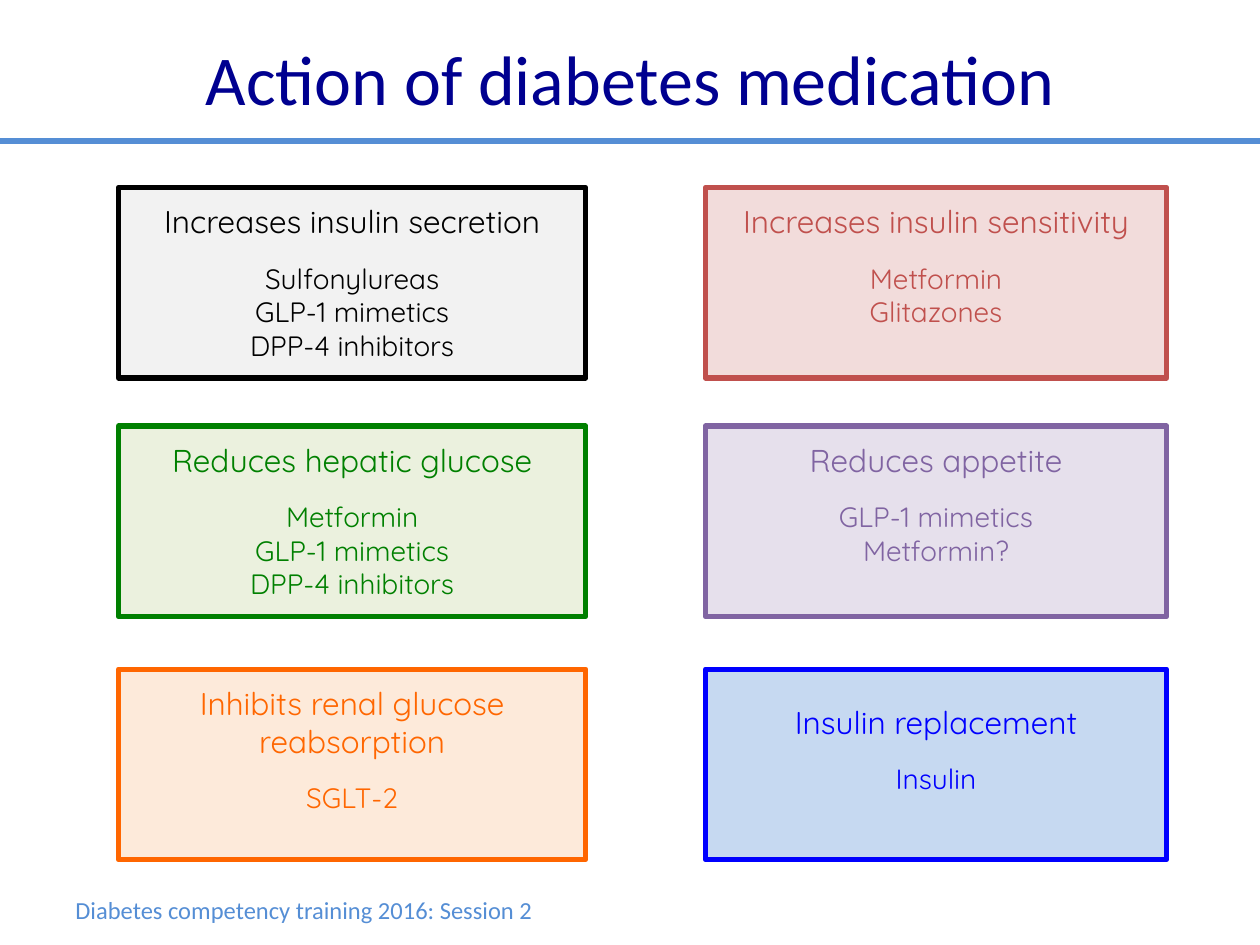
from lxml import etree
from pptx import Presentation
from pptx.dml.color import RGBColor
from pptx.enum.shapes import MSO_CONNECTOR, MSO_SHAPE
from pptx.enum.text import MSO_ANCHOR, PP_ALIGN
from pptx.oxml.ns import qn
from pptx.util import Cm, Pt

NAVY = RGBColor(0x00, 0x00, 0x90)
SKY = RGBColor(0x55, 0x8E, 0xD5)
BLACK, LIGHT_GREY = RGBColor(0x00, 0x00, 0x00), RGBColor(0xF2, 0xF2, 0xF2)
RED, LIGHT_RED = RGBColor(0xC0, 0x50, 0x4D), RGBColor(0xF2, 0xDC, 0xDB)
GREEN, LIGHT_GREEN = RGBColor(0x00, 0x80, 0x00), RGBColor(0xEB, 0xF1, 0xDE)
PURPLE, LIGHT_PURPLE = RGBColor(0x80, 0x64, 0xA2), RGBColor(0xE6, 0xE0, 0xEC)
ORANGE, LIGHT_ORANGE = RGBColor(0xFF, 0x66, 0x00), RGBColor(0xFD, 0xEA, 0xDA)
BLUE, LIGHT_BLUE = RGBColor(0x00, 0x00, 0xFF), RGBColor(0xC6, 0xD9, 0xF1)

HEADING_FONT = "Calibri"
BODY_FONT = "Quicksand"
SLIDE_WIDTH = Cm(25.4)

# Card grid: (left, width) of each column, top of each row
COLUMNS = [(Cm(2.39), Cm(9.42)), (Cm(14.22), Cm(9.3))]
ROW_TOPS = [Cm(3.78), Cm(8.59), Cm(13.49)]
CARD_HEIGHT = Cm(3.84)
CARD_INSET = Cm(0.3)
LOW_INSET = Cm(0.68)

# Rows of (action, medications, colour, fill, top inset)
ACTIONS = [
    [("Increases insulin secretion",
      ["Sulfonylureas", "GLP-1 mimetics", "DPP-4 inhibitors"],
      BLACK, LIGHT_GREY, CARD_INSET),
     ("Increases insulin sensitivity", ["Metformin", "Glitazones"],
      RED, LIGHT_RED, CARD_INSET)],
    [("Reduces hepatic glucose",
      ["Metformin", "GLP-1 mimetics", "DPP-4 inhibitors"],
      GREEN, LIGHT_GREEN, CARD_INSET),
     ("Reduces appetite", ["GLP-1 mimetics", "Metformin?"],
      PURPLE, LIGHT_PURPLE, CARD_INSET)],
    [("Inhibits renal glucose reabsorption", ["SGLT-2"],
      ORANGE, LIGHT_ORANGE, CARD_INSET),
     ("Insulin replacement", ["Insulin"],
      BLUE, LIGHT_BLUE, LOW_INSET)],
]


def style_paragraph(paragraph, font_name, size, color, align):
    paragraph.alignment = align
    for run in paragraph.runs:
        run.font.name = font_name
        run.font.size = Pt(size)
        run.font.color.rgb = color


def add_label(slide, text, box, size, color, align, wrap):
    label = slide.shapes.add_textbox(*box)
    frame = label.text_frame
    frame.word_wrap = wrap
    frame.vertical_anchor = MSO_ANCHOR.MIDDLE
    frame.text = text
    style_paragraph(frame.paragraphs[0], HEADING_FONT, size, color, align)


def add_rule(slide, top):
    rule = slide.shapes.add_connector(
        MSO_CONNECTOR.STRAIGHT, 0, top, SLIDE_WIDTH, top)
    rule.line.color.rgb = SKY
    rule.line.width = Pt(3)
    properties = rule._element.find(qn("p:spPr"))
    etree.SubElement(properties, qn("a:effectLst"))


def add_card(slide, column, top, action, medications, color, fill, inset):
    left, width = column
    card = slide.shapes.add_shape(
        MSO_SHAPE.RECTANGLE, left, top, width, CARD_HEIGHT)
    card.shadow.inherit = False
    card.fill.solid()
    card.fill.fore_color.rgb = fill
    card.line.color.rgb = color
    card.line.width = Pt(3)

    frame = card.text_frame
    frame.word_wrap = True
    frame.vertical_anchor = MSO_ANCHOR.TOP
    frame.margin_top = inset
    frame.text = "\n".join([action, *medications])
    heading, *drugs = frame.paragraphs
    style_paragraph(heading, BODY_FONT, 18, color, PP_ALIGN.CENTER)
    for drug in drugs:
        style_paragraph(drug, BODY_FONT, 16, color, PP_ALIGN.CENTER)
    drugs[0].space_before = Pt(12)


def main():
    presentation = Presentation()
    presentation.slide_width = SLIDE_WIDTH
    presentation.slide_height = Cm(19.05)
    slide = presentation.slides.add_slide(presentation.slide_layouts[6])

    # Heading, rule and footer
    add_rule(slide, Cm(2.84))
    add_label(slide, "Diabetes competency training 2016: Session 2",
              (Cm(1.27), Cm(17.91), Cm(9.83), Cm(0.86)),
              14, SKY, PP_ALIGN.LEFT, False)
    add_label(slide, "Action of diabetes medication",
              (Cm(1.27), Cm(0.28), Cm(22.86), Cm(2.57)),
              40, NAVY, PP_ALIGN.CENTER, True)

    # Medication cards
    for top, row in zip(ROW_TOPS, ACTIONS):
        for column, card in zip(COLUMNS, row):
            add_card(slide, column, top, *card)

    presentation.save("out.pptx")


if __name__ == "__main__":
    main()
